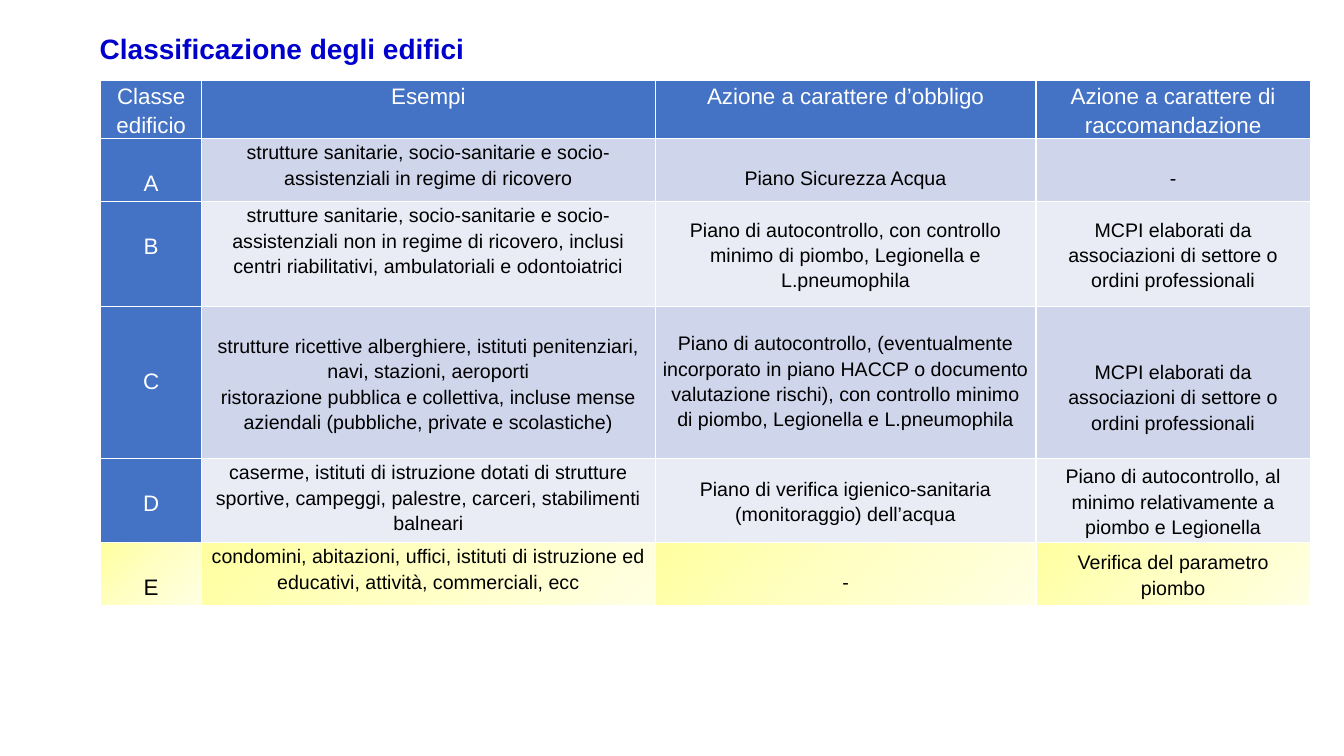
from copy import deepcopy

from pptx import Presentation
from pptx.dml.color import RGBColor
from pptx.enum import text
from pptx.util import Pt

FONT = "Arial"
COLORS = {
    "title": "0000CC",
    "header": "4472C4",
    "odd": "CFD5EA",
    "even": "E9EBF5",
    "white": "FFFFFF",
    "black": "000000",
}
YELLOWS = {0: "FFFFA0", 0.5: "FFFFC5", 1: "FFFFE3"}

COLUMN_WIDTHS = [72, 324, 272, 196]
ROW_HEIGHTS = [41.5, 45, 75, 108.6, 60, 45]
HEADERS = ["Classe edificio", "Esempi", "Azione a carattere d’obbligo",
           "Azione a carattere di raccomandazione"]

# Each cell: its text and its offset from the top; None centres it vertically
MCPI = "MCPI elaborati da associazioni di settore o ordini professionali"
CLASSES = [
    [("A", 21),
     ("strutture sanitarie, socio-sanitarie e socio-assistenziali "
      "in regime di ricovero", 0),
     ("Piano Sicurezza Acqua", 18.5),
     ("-", 18.5)],
    [("B", 21),
     ("strutture sanitarie, socio-sanitarie e socio-assistenziali non in "
      "regime di ricovero, inclusi centri riabilitativi, ambulatoriali e "
      "odontoiatrici", 0),
     ("Piano di autocontrollo, con controllo minimo di piombo, Legionella e "
      "L.pneumophila", None),
     (MCPI, None)],
    [("C", 42),
     ("strutture ricettive alberghiere, istituti penitenziari, navi, "
      "stazioni, aeroporti\n"
      "ristorazione pubblica e collettiva, incluse mense aziendali "
      "(pubbliche, private e scolastiche)", 18.5),
     ("Piano di autocontrollo, (eventualmente incorporato in piano HACCP o "
      "documento valutazione rischi), con controllo minimo di piombo, "
      "Legionella e L.pneumophila", 16.5),
     (MCPI, 37)],
    [("D", 21),
     ("caserme, istituti di istruzione dotati di strutture sportive, "
      "campeggi, palestre, carceri, stabilimenti balneari", 0),
     ("Piano di verifica igienico-sanitaria (monitoraggio) dell’acqua", None),
     ("Piano di autocontrollo, al minimo relativamente a piombo e Legionella",
      None)],
    [("E", 21),
     ("condomini, abitazioni, uffici, istituti di istruzione ed educativi, "
      "attività, commerciali, ecc", 0),
     ("-", 18.5),
     ("Verifica del parametro piombo", None)],
]


def write(frame, content, size, color, bold=False, spacing=1.0,
          align=text.PP_ALIGN.LEFT):
    frame.word_wrap = True
    frame.text = content
    for paragraph in frame.paragraphs:
        paragraph.alignment = align
        paragraph.line_spacing = spacing
        paragraph.space_before = Pt(0)
        font = paragraph.runs[0].font
        font.name, font.size, font.bold = FONT, Pt(size), bold
        font.color.rgb = RGBColor.from_string(COLORS[color])


def fill_solid(cell, color):
    cell.fill.solid()
    cell.fill.fore_color.rgb = RGBColor.from_string(COLORS[color])


def fill_yellow(cell):
    fill = cell.fill
    fill.gradient()
    fill.gradient_angle = 315
    # Add a middle stop to the two default ones
    first = cell._tc.tcPr.find(".//{*}gs")
    first.addnext(deepcopy(first))
    for stop, (position, color) in zip(fill.gradient_stops, YELLOWS.items()):
        stop.position = position
        stop.color.rgb = RGBColor.from_string(color)


def write_cell(cell, content, size, color, top=0):
    cell.margin_left = cell.margin_right = Pt(5)
    cell.margin_top, cell.margin_bottom = Pt(top or 0), Pt(0)
    cell.vertical_anchor = (text.MSO_ANCHOR.MIDDLE if top is None
                            else text.MSO_ANCHOR.TOP)
    write(cell.text_frame, content, size, color, spacing=1.15,
          align=text.PP_ALIGN.CENTER)


def add_title(slide, content):
    title = slide.shapes.title
    title.left, title.top = Pt(64), Pt(18.7)
    title.width, title.height = Pt(487.5), Pt(31.7)
    title.text_frame.vertical_anchor = text.MSO_ANCHOR.MIDDLE
    title.text_frame.auto_size = text.MSO_AUTO_SIZE.NONE
    write(title.text_frame, content, 20, "title", bold=True)


def add_class_table(slide):
    table = slide.shapes.add_table(
        len(ROW_HEIGHTS), len(COLUMN_WIDTHS), Pt(72), Pt(57.6),
        Pt(sum(COLUMN_WIDTHS)), Pt(sum(ROW_HEIGHTS))).table
    for column, width in zip(table.columns, COLUMN_WIDTHS):
        column.width = Pt(width)
    for row, height in zip(table.rows, ROW_HEIGHTS):
        row.height = Pt(height)

    # Header row
    for column, heading in enumerate(HEADERS):
        cell = table.cell(0, column)
        fill_solid(cell, "header")
        write_cell(cell, heading, 16, "white")

    # Building classes, the last one highlighted in yellow
    for row, entries in enumerate(CLASSES, 1):
        highlighted = row == len(CLASSES)
        for column, (content, top) in enumerate(entries):
            cell = table.cell(row, column)
            is_class = column == 0
            if highlighted:
                fill_yellow(cell)
            elif is_class:
                fill_solid(cell, "header")
            else:
                fill_solid(cell, "odd" if row % 2 else "even")
            write_cell(cell, content, 16 if is_class else 14,
                       "white" if is_class and not highlighted else "black",
                       top)


def main():
    deck = Presentation()
    deck.slide_width, deck.slide_height = Pt(960), Pt(540)
    slide = deck.slides.add_slide(deck.slide_layouts[5])
    add_title(slide, "Classificazione degli edifici")
    add_class_table(slide)
    deck.save("out.pptx")


if __name__ == "__main__":
    main()
